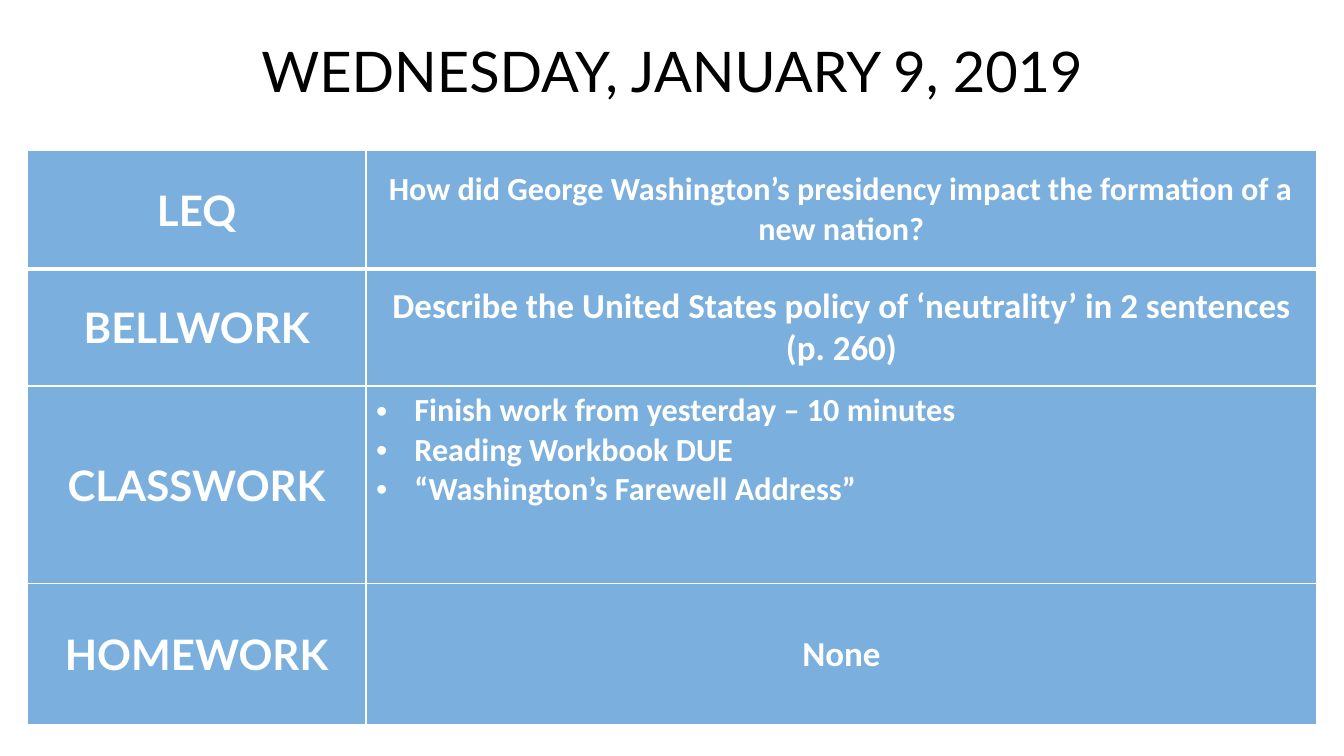
"""Build the daily class agenda slide."""
import dataclasses
from typing import Any

import lxml.etree
import pptx
import pptx.dml.color
import pptx.enum.text
import pptx.oxml.ns
import pptx.util

Inches = pptx.util.Inches
Pt = pptx.util.Pt
ALIGN = pptx.enum.text.PP_ALIGN
ANCHOR = pptx.enum.text.MSO_ANCHOR
COLOURS = {"panel": "5B9BD5", "title_band": "FFFFFF", "label": "FFFFFF", "title": "000000", "rule": "FFFFFF"}
LEFT, WIDTH = 0.27, 12.79
LABEL_WIDTH = 3.36


@dataclasses.dataclass(frozen=True)
class AgendaRow:
    """One agenda heading with its details."""

    heading: str
    details: list[str]
    size: int
    height: float
    bulleted: bool = False


AGENDA = [
    AgendaRow("LEQ", ["How did George Washington’s presidency impact the formation of a new nation?"], 23, 1.18),
    AgendaRow("BELLWORK", ["Describe the United States policy of ‘neutrality’ in 2 sentences", "(p. 260)"], 25, 1.16),
    AgendaRow(
        "CLASSWORK",
        ["Finish work from yesterday – 10 minutes", "Reading Workbook DUE", "“Washington’s Farewell Address”"],
        23, 1.96, bulleted=True,
    ),
    AgendaRow("HOMEWORK", ["None"], 25, 1.4),
]


def apply_format(target: Any, values: dict[str, Any]) -> None:
    """Set each named attribute on the target."""
    for name, value in values.items():
        setattr(target, name, value)


def fill_translucent(owner: Any, colour: str, opacity: int) -> None:
    """Fill a shape or cell with a colour at a percentage of opacity."""
    owner.fill.solid()
    owner.fill.fore_color.rgb = pptx.dml.color.RGBColor.from_string(COLOURS[colour])
    properties = owner._tc.tcPr if hasattr(owner, "_tc") else owner._element.spPr
    rgb = properties.find(".//" + pptx.oxml.ns.qn("a:srgbClr"))
    lxml.etree.SubElement(rgb, pptx.oxml.ns.qn("a:alpha"), val=str(opacity * 1000))


def rule_cell(cell: Any, widths: dict[str, int]) -> None:
    """Draw cell borders, given as side and points in left, right, top, bottom order."""
    qn = pptx.oxml.ns.qn
    properties = cell._tc.get_or_add_tcPr()
    for position, (side, points) in enumerate(widths.items()):
        line = lxml.etree.Element(qn(f"a:ln{side}"), w=str(Pt(points)))
        solid = lxml.etree.SubElement(line, qn("a:solidFill"))
        lxml.etree.SubElement(solid, qn("a:srgbClr"), val=COLOURS["rule"])
        properties.insert(position, line)


def write_lines(frame: Any, lines: list[str], font: dict[str, Any], colour: str, align: Any) -> None:
    """Write one formatted paragraph per line."""
    frame.text = "\n".join(lines)
    for paragraph in frame.paragraphs:
        paragraph.alignment = align
        for run in paragraph.runs:
            apply_format(run.font, font)
            run.font.color.rgb = pptx.dml.color.RGBColor.from_string(COLOURS[colour])


def add_bullets(frame: Any) -> None:
    """Give each paragraph a hanging bullet."""
    indent = Inches(0.38)
    for paragraph in frame.paragraphs:
        properties = paragraph._p.get_or_add_pPr()
        properties.set("marL", str(indent))
        properties.set("indent", str(-indent))
        lxml.etree.SubElement(properties, pptx.oxml.ns.qn("a:buFont"), typeface="Arial")
        lxml.etree.SubElement(properties, pptx.oxml.ns.qn("a:buChar"), char="•")


def add_title(slide: Any) -> None:
    """Place the date in the title placeholder."""
    title = slide.shapes.title
    apply_format(title, {"left": Inches(LEFT), "top": Inches(0.2), "width": Inches(WIDTH), "height": Inches(1)})
    fill_translucent(title, "title_band", 65)
    frame = title.text_frame
    apply_format(frame, {
        "vertical_anchor": ANCHOR.MIDDLE,
        "word_wrap": True,
        "auto_size": pptx.enum.text.MSO_AUTO_SIZE.NONE,
    })
    font = {"name": "Lato", "size": Pt(40), "bold": False}
    write_lines(frame, ["WEDNESDAY, JANUARY 9, 2019"], font, "title", ALIGN.CENTER)


def add_agenda(slide: Any) -> None:
    """Draw the agenda table."""
    height = sum(row.height for row in AGENDA)
    agenda = slide.shapes.add_table(
        len(AGENDA), 2, Inches(LEFT), Inches(1.49), Inches(WIDTH), Inches(height)
    ).table
    agenda.columns[0].width = Inches(LABEL_WIDTH)
    agenda.columns[1].width = Inches(WIDTH - LABEL_WIDTH)
    for index, row in enumerate(AGENDA):
        agenda.rows[index].height = Inches(row.height)
        heading, details = agenda.cell(index, 0), agenda.cell(index, 1)
        for cell in (heading, details):
            fill_translucent(cell, "panel", 80)
            cell.vertical_anchor = ANCHOR.MIDDLE
            if index == 0:
                rule_cell(cell, {"L": 1, "R": 1, "T": 1, "B": 3})
        heading_font = {"name": "Lato", "size": Pt(30), "bold": True}
        write_lines(heading.text_frame, [row.heading], heading_font, "label", ALIGN.CENTER)
        details_font = {"name": "Calibri", "size": Pt(row.size), "bold": True}
        align = ALIGN.LEFT if row.bulleted else ALIGN.CENTER
        write_lines(details.text_frame, row.details, details_font, "label", align)
        if row.bulleted:
            details.vertical_anchor = ANCHOR.TOP
            add_bullets(details.text_frame)


def main() -> None:
    """Create and save the presentation."""
    presentation = pptx.Presentation()
    apply_format(presentation, {"slide_width": Inches(13.33), "slide_height": Inches(7.5)})
    slide = presentation.slides.add_slide(presentation.slide_layouts[5])
    add_title(slide)
    add_agenda(slide)
    presentation.save("out.pptx")


if __name__ == "__main__":
    main()
